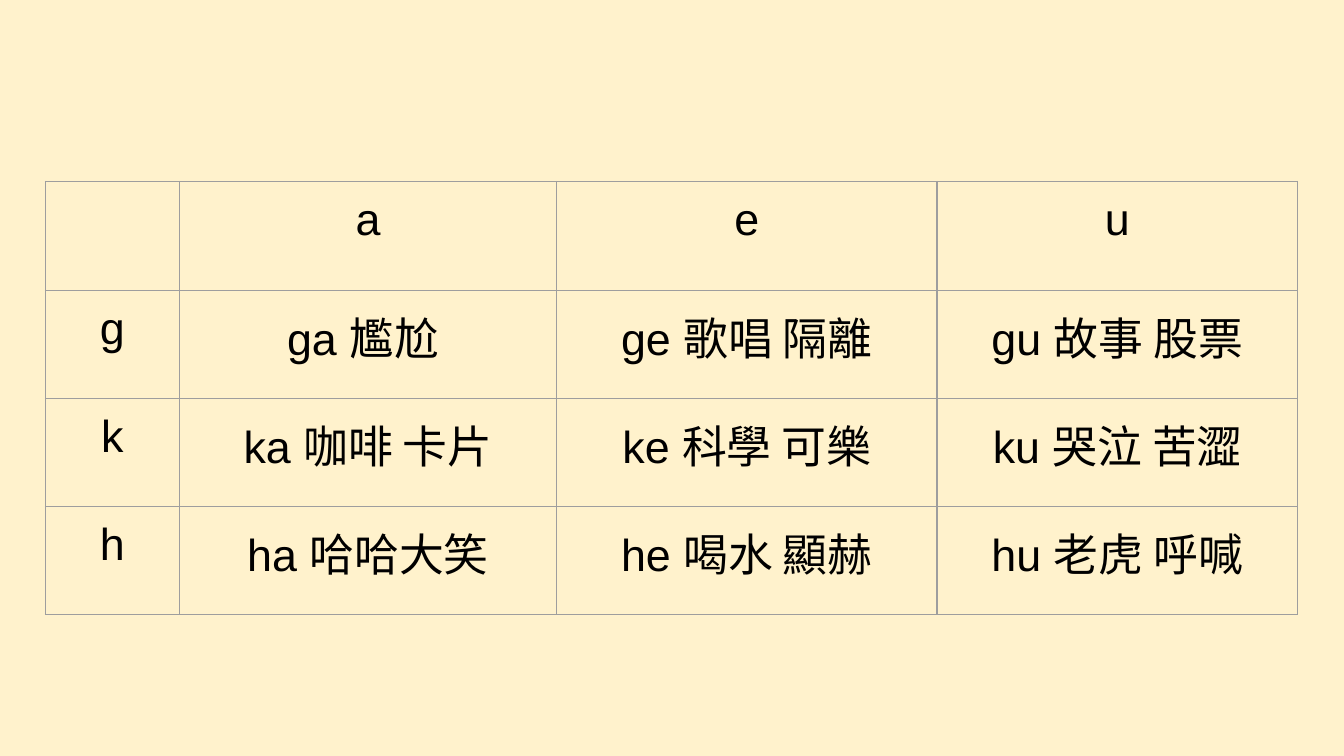
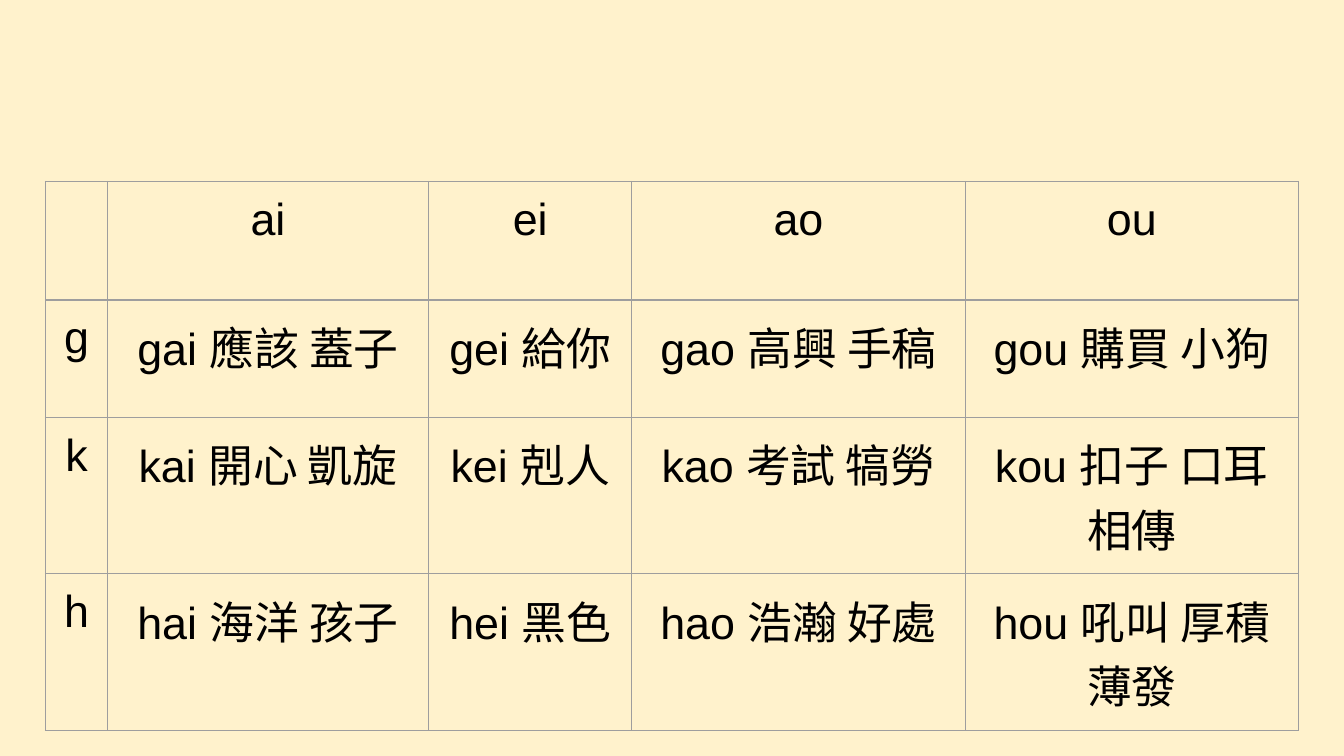
"""Build two syllable charts pairing initials and finals with sample words."""
from dataclasses import dataclass

from lxml.etree import SubElement
from pptx import Presentation
from pptx.dml.color import RGBColor
from pptx.enum.text import PP_ALIGN
from pptx.oxml.ns import qn
from pptx.util import Cm, Pt


@dataclass(frozen=True)
class Theme:
    paper: str = "FFF2CC"
    ink: str = "000000"
    rule: str = "9E9E9E"
    font: str = "Arial"
    size: float = 24
    line: float = 0.75
    inset: float = 0.25
    left: float = 0.86
    top: float = 3.43


class Deck:
    def __init__(self, theme):
        self.theme = theme
        self.prs = Presentation()
        self.prs.slide_width, self.prs.slide_height = Cm(25.4), Cm(14.29)
        self.slide = None

    def page(self):
        self.slide = self.prs.slides.add_slide(self.prs.slide_layouts[6])
        fill = self.slide.background.fill
        fill.solid()
        fill.fore_color.rgb = RGBColor.from_string(self.theme.paper)

    def border(self, cell):
        props = cell._tc.get_or_add_tcPr()
        for side in "LRTB":
            line = SubElement(props, qn(f"a:ln{side}"), w=str(Pt(self.theme.line)))
            fill = SubElement(line, qn("a:solidFill"))
            SubElement(fill, qn("a:srgbClr"), val=self.theme.rule)

    def cell(self, cell, text):
        theme = self.theme
        inset = Cm(theme.inset)
        cell.margin_left = cell.margin_right = inset
        cell.margin_top = cell.margin_bottom = inset
        self.border(cell)
        cell.fill.background()
        cell.text_frame.text = text
        para = cell.text_frame.paragraphs[0]
        para.alignment = PP_ALIGN.CENTER
        for font in [para.font, *(run.font for run in para.runs)]:
            font.size, font.name = Pt(theme.size), theme.font
            font.color.rgb = RGBColor.from_string(theme.ink)

    def table(self, rows, widths, heights):
        frame = self.slide.shapes.add_table(
            len(rows), len(widths), Cm(self.theme.left), Cm(self.theme.top),
            Cm(sum(widths)), Cm(sum(heights)))
        table = frame.table
        table.first_row = table.horz_banding = False
        for col, width in zip(table.columns, widths):
            col.width = Cm(width)
        for row, height, texts in zip(table.rows, heights, rows):
            row.height = Cm(height)
            for cell, text in zip(row.cells, texts):
                self.cell(cell, text)

    def chart(self, finals, words, widths, head, body):
        self.page()
        rows = [["", *finals]]
        for initial, samples in words.items():
            rows.append([initial] + [f"{initial}{final} {sample}"
                                     for final, sample in zip(finals, samples)])
        self.table(rows, widths, [head] + [body] * len(words))


def main():
    deck = Deck(Theme())
    deck.chart(
        ["a", "e", "u"],
        {"g": ["尷尬 ", "歌唱 隔離", "故事 股票"],
         "k": ["咖啡 卡片", "科學 可樂", "哭泣 苦澀"],
         "h": ["哈哈大笑", "喝水 顯赫", "老虎 呼喊"]},
        [2.53, 7.13, 7.19, 6.81], 2.06, 2.04)
    deck.chart(
        ["ai", "ei", "ao", "ou"],
        {"g": ["應該 蓋子", "給你", "高興 手稿", "購買 小狗"],
         "k": ["開心 凱旋", "剋人", "考試 犒勞", "扣子 口耳相傳"],
         "h": ["海洋 孩子", "黑色", "浩瀚 好處", "吼叫 厚積薄發"]},
        [1.17, 6.07, 3.84, 6.3, 6.3], 2.24, 2.22)
    deck.prs.save("out.pptx")


if __name__ == "__main__":
    main()
